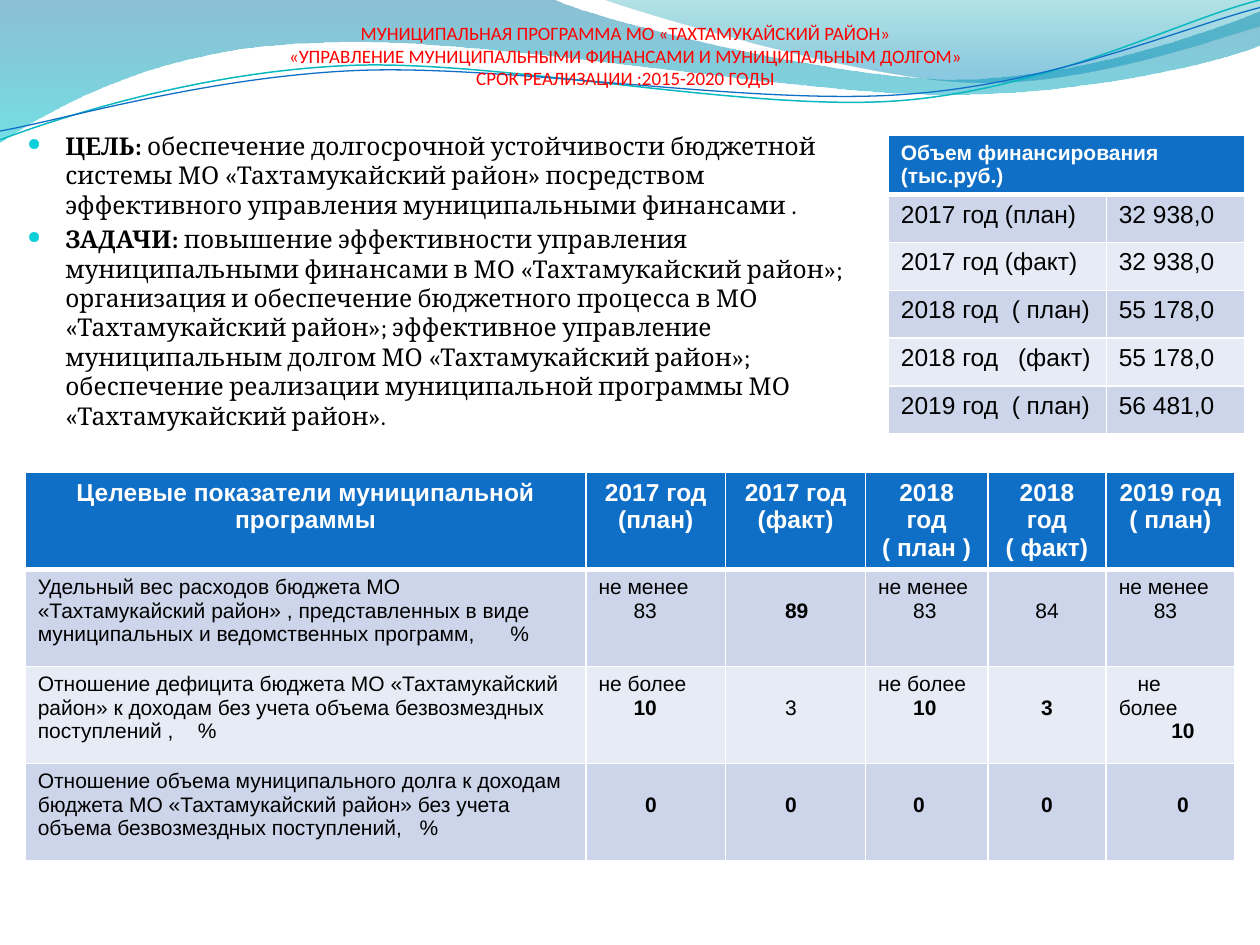
from dataclasses import dataclass

from lxml.etree import SubElement
from pptx import Presentation
from pptx.dml.color import RGBColor
from pptx.enum.text import MSO_ANCHOR, MSO_AUTO_SIZE, PP_ALIGN
from pptx.oxml.ns import qn
from pptx.util import Inches, Pt


@dataclass(frozen=True)
class Theme:
    blue: str = "0F6FC6"
    teal: str = "0AB8BF"
    bullet: str = "0BD0D9"
    red: str = "FF0000"
    black: str = "000000"
    white: str = "FFFFFF"
    bands: tuple = ("CCD5EA", "E7EBF5")
    title: float = 10.8
    large: float = 14
    small: float = 12


T = Theme()
SPACE = 0.0463  # width of one space at the small size, inches

# A curve is a start point, then line ends (x, y) or cubic segments (six numbers).
LEFT_WAVE = [
    (0, 0), (4.4, 0), (4.76, 0.17, 6.64, 0.63, 7.58, 0.63),
    (8.53, 0.63, 9.58, 0.26, 10, 0.09), (10, 0.36),
    (9.83, 0.44, 8.7, 0.76, 7.46, 0.75), (6.22, 0.75, 3.82, 0.28, 2.57, 0.34),
    (1.29, 0.36, 0.46, 0.83, 0, 1.13),
]
RIGHT_WAVE = [
    (4.79, 0), (5.09, 0.11, 6.82, 0.62, 7.69, 0.65),
    (8.56, 0.69, 9.61, 0.32, 10, 0.21), (10, 0),
]
TEAL_LINE = [
    (0, 1.11), (0.48, 0.93, 1.58, 0.57, 2.77, 0.52),
    (3.95, 0.47, 5.93, 0.89, 7.13, 0.8), (8.33, 0.71, 9.38, 0.15, 10, 0),
]
BLUE_LINE = [
    (0, 1.04), (0.47, 0.96, 1.64, 0.61, 2.83, 0.56),
    (4.03, 0.51, 5.97, 0.84, 7.17, 0.75), (8.36, 0.67, 9.41, 0.21, 10, 0.06),
]

TITLE = [
    "МУНИЦИПАЛЬНАЯ ПРОГРАММА МО «ТАХТАМУКАЙСКИЙ РАЙОН»",
    "«УПРАВЛЕНИЕ МУНИЦИПАЛЬНЫМИ ФИНАНСАМИ И МУНИЦИПАЛЬНЫМ ДОЛГОМ»",
    "СРОК РЕАЛИЗАЦИИ :2015-2020 ГОДЫ",
]
GOALS = [
    ("ЦЕЛЬ: ", "обеспечение долгосрочной устойчивости бюджетной системы МО "
     "«Тахтамукайский район» посредством эффективного управления "
     "муниципальными финансами ."),
    ("ЗАДАЧИ: ", "повышение эффективности управления муниципальными финансами "
     "в МО «Тахтамукайский район»; организация и обеспечение бюджетного "
     "процесса в МО «Тахтамукайский район»; эффективное управление "
     "муниципальным долгом МО «Тахтамукайский район»; обеспечение реализации "
     "муниципальной программы МО «Тахтамукайский район»."),
]
# Each row: label, amount, tab stop in inches or 0.
FUNDS = [
    ("2017 год (план)", "32 938,0", 0),
    ("2017 год (факт)", "32 938,0", 0),
    ("2018 год\t( план)", "55 178,0", 0.88),
    ("2018 год\t(факт)", "55 178,0", 0.93),
    ("2019 год\t( план)", "56 481,0", 0.88),
]
HEADS = [
    ["Целевые показатели муниципальной программы"],
    ["2017 год (план)"], ["2017 год (факт)"],
    ["2018 год", "( план )"], ["2018 год", "( факт)"], ["2019 год", "( план)"],
]
# Each row: name, tab stop, values; a value is caption, number, indent in spaces, bold.
TARGETS = [
    ("Удельный вес расходов бюджета МО «Тахтамукайский район» , представленных "
     "в виде муниципальных и ведомственных программ,\t%", 3.75,
     [("не менее", "83", 6, False), ("", "89", 8, True),
      ("не менее", "83", 6, False), ("", "84", 6, False),
      ("не менее", "83", 6, False)]),
    ("Отношение дефицита бюджета МО «Тахтамукайский район» к доходам без учета "
     "объема безвозмездных поступлений ,\t%", 1.27,
     [("не более", "10", 6, True), ("", "3", 8, False),
      ("не более", "10", 6, True), ("", "3", 7, True),
      ("не более", "10", 9, True)]),
    ("Отношение объема муниципального долга к доходам бюджета МО "
     "«Тахтамукайский район» без учета объема безвозмездных поступлений,\t%", 3.03,
     [("", "0", gap, True) for gap in (8, 8, 6, 7, 10)]),
]


def rgb(code):
    return RGBColor.from_string(code)


def put(para, text, size=T.small, font="Arial", color=T.black, bold=False, tab=0):
    run = para.add_run()
    run.text = text
    run.font.size, run.font.name, run.font.bold = Pt(size), font, bold
    run.font.color.rgb = rgb(color)
    if tab:
        stops = SubElement(para._p.get_or_add_pPr(), qn("a:tabLst"))
        SubElement(stops, qn("a:tab"), pos=str(Inches(tab)), algn="l")


def paras(frame, count):
    """Return the first paragraph and as many new ones as count needs."""
    return [frame.paragraphs[0]] + [frame.add_paragraph() for _ in range(count - 1)]


def shift(para, left=0, first=0):
    props = para._p.get_or_add_pPr()
    props.set("marL", str(Inches(left)))
    props.set("indent", str(Inches(first)))
    return props


def draw(slide, curve, close):
    """Build the outline through all points, then bend its cubic segments."""
    flat = [(Inches(part[i]), Inches(part[i + 1]))
            for part in curve for i in range(0, len(part), 2)]
    pen = slide.shapes.build_freeform(*flat[0])
    pen.add_line_segments(flat[1:], close=close)
    shape = pen.convert_to_shape()
    shape.shadow.inherit = False
    legs = iter(list(shape._element.iter(qn("a:lnTo"))))
    for part in curve[1:]:
        leg = next(legs)
        if len(part) == 6:
            bend = leg.makeelement(qn("a:cubicBezTo"))
            leg.addprevious(bend)
            for piece in (leg, next(legs), next(legs)):
                bend.append(piece[0])
                piece.getparent().remove(piece)
    return shape


def add_wave(slide, curve, stops):
    """Stops are (position, colour, opacity in percent), from the top down."""
    shape = draw(slide, curve, True)
    shape.line.fill.background()
    shape.fill.gradient()
    shape.fill.gradient_angle = 270
    for stop, (place, color, alpha) in zip(shape.fill.gradient_stops, stops):
        stop.position = place
        stop.color.rgb = rgb(color)
        tint = stop._gs.find(qn("a:srgbClr"))
        SubElement(tint, qn("a:alpha"), val=str(alpha * 1000))


def add_line(slide, curve, color, width):
    shape = draw(slide, curve, False)
    shape.fill.background()
    shape.line.color.rgb, shape.line.width = rgb(color), Pt(width)


def set_title(slide):
    title = slide.shapes.title
    title.left, title.top = Inches(0.28), Inches(0.12)
    title.width, title.height = Inches(9.37), Inches(0.94)
    frame = title.text_frame
    frame.auto_size, frame.vertical_anchor = MSO_AUTO_SIZE.NONE, MSO_ANCHOR.TOP
    frame.margin_left = frame.margin_right = 0
    para = frame.paragraphs[0]
    para.alignment = PP_ALIGN.CENTER
    for row, text in enumerate(TITLE):
        if row:
            para.add_line_break()
        put(para, text, size=T.title, font="Calibri", color=T.red)
    slide.shapes._spTree.append(title._element)  # in front of the waves


def add_goals(slide):
    box = slide.shapes.add_textbox(Inches(0.12), Inches(0.99), Inches(6.77), Inches(2.52))
    frame = box.text_frame
    frame.word_wrap = True
    for para, (head, text) in zip(paras(frame, len(GOALS)), GOALS):
        para.space_before = Pt(2.8)
        props = shift(para, 0.3, -0.3)
        SubElement(SubElement(props, qn("a:buClr")), qn("a:srgbClr"), val=T.bullet)
        SubElement(props, qn("a:buSzPct"), val="70000")
        SubElement(props, qn("a:buChar"), char="●")
        put(para, head, size=T.large, font="Cambria", bold=True)
        put(para, text, size=T.large, font="Cambria")


def paint(cell, row):
    """Give a cell its white borders and the fill of its row."""
    widths = {"L": 1, "R": 1, "T": 3 if row == 1 else 1, "B": 1 if row else 3}
    for side, width in widths.items():
        line = SubElement(cell._tc.get_or_add_tcPr(), qn("a:ln" + side), w=str(Pt(width)))
        SubElement(SubElement(line, qn("a:solidFill")), qn("a:srgbClr"), val=T.white)
    cell.fill.solid()
    cell.fill.fore_color.rgb = rgb(T.bands[(row - 1) % 2] if row else T.blue)


def add_grid(slide, left, top, cols, rows):
    table = slide.shapes.add_table(
        len(rows), len(cols), Inches(left), Inches(top),
        Inches(sum(cols)), Inches(sum(rows))).table
    table.horz_banding = False
    for col, width in zip(table.columns, cols):
        col.width = Inches(width)
    for index, (row, height) in enumerate(zip(table.rows, rows)):
        row.height = Inches(height)
        for cell in row.cells:
            paint(cell, index)
    return table


def add_funds(slide):
    table = add_grid(slide, 7.05, 1.07, [1.73, 1.1], [0.46] + [0.38] * len(FUNDS))
    head = table.cell(0, 0)
    head.merge(table.cell(0, 1))
    put(head.text_frame.paragraphs[0], "Объем финансирования (тыс.руб.)",
        color=T.white, bold=True)
    for row, (label, amount, tab) in enumerate(FUNDS, 1):
        put(table.cell(row, 0).text_frame.paragraphs[0], label, size=T.large, tab=tab)
        put(table.cell(row, 1).text_frame.paragraphs[0], amount, size=T.large)


def fill_value(cell, note, value, gap, bold, narrow):
    lines = paras(cell.text_frame, 2 if note else 1)
    if note:
        put(lines[0], note)
        if narrow:
            shift(lines[0], first=0.15)
    else:
        cell.margin_top = Inches(0.24)
    shift(lines[-1], gap * SPACE)
    put(lines[-1], value, bold=bold)


def add_targets(slide):
    table = add_grid(slide, 0.2, 3.75, [4.45, 1.11, 1.11, 0.97, 0.94, 1.02], [0.77] * 4)
    for col, head in enumerate(HEADS):
        cell = table.cell(0, col)
        cell.margin_bottom = Inches(0.01)
        for para, text in zip(paras(cell.text_frame, len(head)), head):
            para.alignment = PP_ALIGN.CENTER
            put(para, text, size=T.large, color=T.white, bold=True)
    for row, (name, tab, values) in enumerate(TARGETS, 1):
        put(table.cell(row, 0).text_frame.paragraphs[0], name, tab=tab)
        for col, value in enumerate(values, 1):
            fill_value(table.cell(row, col), *value, narrow=(row, col) == (2, 5))


def main():
    deck = Presentation()
    deck.slide_width, deck.slide_height = Inches(10), Inches(7.5)
    slide = deck.slides.add_slide(deck.slide_layouts[5])
    add_wave(slide, LEFT_WAVE, [(0, "0074A1", 45), (1, "00C6CF", 55)])
    add_wave(slide, RIGHT_WAVE, [(0, "00A1A9", 30), (0.8, "008BBF", 45)])
    add_line(slide, TEAL_LINE, T.teal, 0.85)
    add_line(slide, BLUE_LINE, T.blue, 0.75)
    set_title(slide)
    add_funds(slide)
    add_goals(slide)
    add_targets(slide)
    deck.save("out.pptx")


if __name__ == "__main__":
    main()
